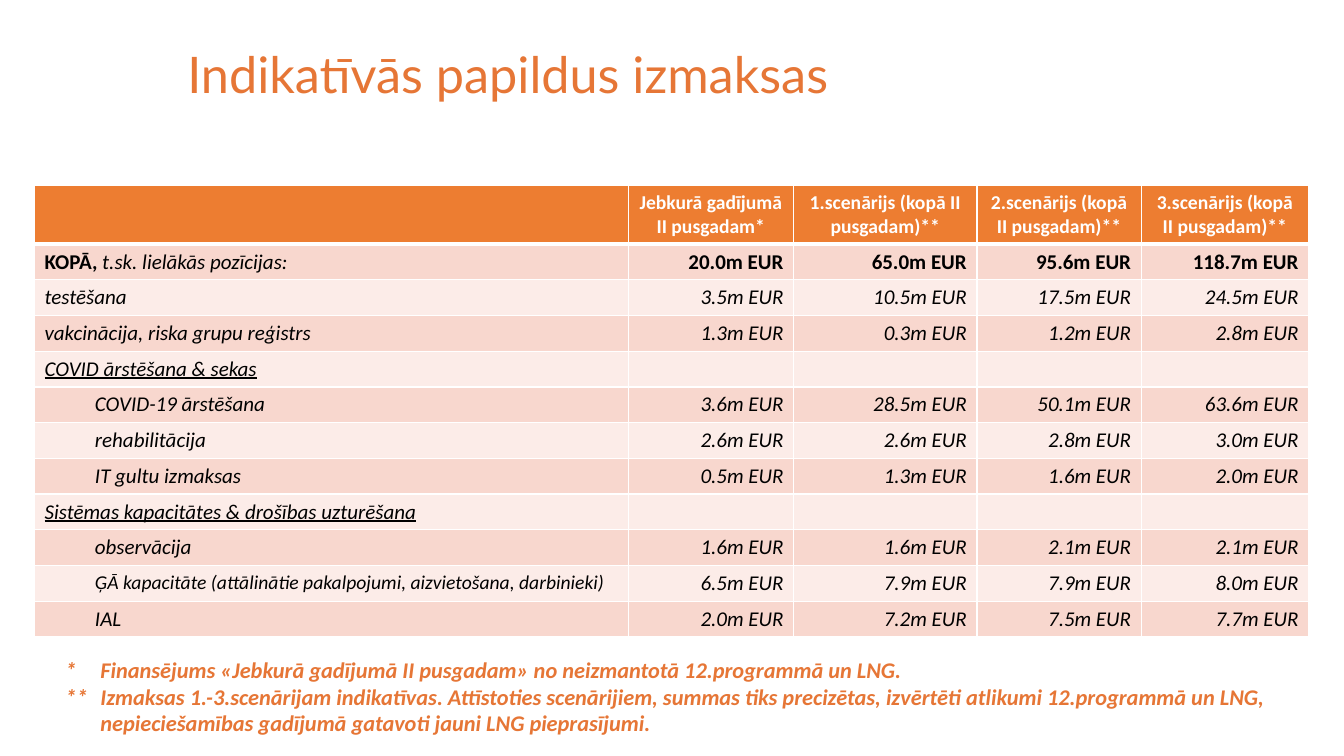
import pptx
import pptx.dml.color
import pptx.enum.text
import pptx.oxml
import pptx.oxml.ns
import pptx.util

Cm, Pt = pptx.util.Cm, pptx.util.Pt
ALIGN = pptx.enum.text.PP_ALIGN
COLORS = {
    "accent": "E67636",
    "header": "ED7D31",
    "band_dark": "F8D7CE",
    "band_light": "FCECE8",
    "white": "FFFFFF",
    "black": "000000",
}
COLUMN_WIDTHS = [14.96, 4.17, 4.62, 4.14, 4.22]
HEADER_HEIGHT, ROW_HEIGHT = 1.47, 0.9
HEADERS = [
    "",
    "Jebkurā gadījumā II pusgadam*",
    "1.scenārijs (kopā II pusgadam)**",
    "2.scenārijs (kopā II pusgadam)**",
    "3.scenārijs (kopā II pusgadam)**",
]
# Kind of row, label, amounts in millions of euros
COSTS = [
    ("total", "KOPĀ,", ["20.0", "65.0", "95.6", "118.7"]),
    ("item", "testēšana", ["3.5", "10.5", "17.5", "24.5"]),
    ("item", "vakcinācija, riska grupu reģistrs", ["1.3", "0.3", "1.2", "2.8"]),
    ("group", "COVID ārstēšana & sekas", []),
    ("sub", "COVID-19 ārstēšana", ["3.6", "28.5", "50.1", "63.6"]),
    ("sub", "rehabilitācija", ["2.6", "2.6", "2.8", "3.0"]),
    ("sub", "IT gultu izmaksas", ["0.5", "1.3", "1.6", "2.0"]),
    ("group", "Sistēmas kapacitātes & drošības uzturēšana", []),
    ("sub", "observācija", ["1.6", "1.6", "2.1", "2.1"]),
    ("long_sub", "ĢĀ kapacitāte (attālinātie pakalpojumi, aizvietošana, darbinieki)",
     ["6.5", "7.9", "7.9", "8.0"]),
    ("sub", "IAL", ["2.0", "7.2", "7.5", "7.7"]),
]
FOOTNOTES = [
    ("*", "Finansējums «Jebkurā gadījumā II pusgadam» no neizmantotā 12.programmā un LNG."),
    ("**", "Izmaksas 1.-3.scenārijam indikatīvas. Attīstoties scenārijiem, summas tiks "
           "precizētas, izvērtēti atlikumi 12.programmā un LNG, nepieciešamības gadījumā "
           "gatavoti jauni LNG pieprasījumi."),
]


def rgb(name):
    return pptx.dml.color.RGBColor.from_string(COLORS[name])


def add_run(p, text, size, color="black", font="Calibri", bold=False, italic=False,
            underline=False):
    r = p.add_run()
    r.text = text
    r.font.size = Pt(size)
    r.font.name = font
    r.font.bold = bold
    r.font.italic = italic
    r.font.underline = underline
    r.font.color.rgb = rgb(color)


def add_text_box(slide, left, top, width, height):
    sp = slide.shapes.add_textbox(Cm(left), Cm(top), Cm(width), Cm(height))
    sp.text_frame.word_wrap = True
    return sp.text_frame


def set_indent(p, left, first=0.0):
    pPr = p._p.get_or_add_pPr()
    pPr.set("marL", str(Cm(left)))
    pPr.set("indent", str(Cm(first)))


def style_cell(cell, fill, top=1, bottom=1):
    """Give a cell white borders, with widths in points, and a solid fill."""
    tcPr = cell._tc.get_or_add_tcPr()
    for side, width in zip("LRTB", (1, 1, top, bottom)):
        tcPr.append(pptx.oxml.parse_xml(
            f'<a:ln{side} {pptx.oxml.ns.nsdecls("a")} w="{Pt(width)}"><a:solidFill>'
            f'<a:srgbClr val="{COLORS["white"]}"/></a:solidFill></a:ln{side}>'))
    cell.fill.solid()
    cell.fill.fore_color.rgb = rgb(fill)


def set_empty_size(cell, size):
    """Keep an empty cell from making its row taller than its neighbours' text."""
    cell.text_frame.paragraphs[0]._p.append(pptx.oxml.parse_xml(
        f'<a:endParaRPr {pptx.oxml.ns.nsdecls("a")} sz="{size * 100}"/>'))


def add_title(slide, text):
    tf = add_text_box(slide, 4.47, 0.1, 27.15, 3.68)
    tf.vertical_anchor = pptx.enum.text.MSO_ANCHOR.MIDDLE
    p = tf.paragraphs[0]
    p.line_spacing = 0.9
    add_run(p, text, 36, "accent", "Lato")


def fill_header(table):
    for cell, text in zip(table.rows[0].cells, HEADERS):
        style_cell(cell, "header", bottom=3)
        if text:
            p = cell.text_frame.paragraphs[0]
            p.alignment = ALIGN.CENTER
            add_run(p, text, 14, "white", bold=True)


def fill_cost_row(cells, kind, label, amounts):
    total = kind == "total"
    p = cells[0].text_frame.paragraphs[0]
    if kind in ("sub", "long_sub"):
        set_indent(p, 1.27)
    add_run(p, label, 14 if kind == "long_sub" else 15, bold=total, italic=not total,
            underline=kind == "group")
    if total:
        add_run(p, " t.sk. lielākās pozīcijas:", 15, italic=True)
    for cell, amount in zip(cells[1:], amounts):
        p = cell.text_frame.paragraphs[0]
        p.alignment = ALIGN.RIGHT
        add_run(p, f"{amount}m EUR", 15, bold=total, italic=not total)
    for cell in cells[1 + len(amounts):]:
        set_empty_size(cell, 15)


def add_cost_table(slide):
    height = HEADER_HEIGHT + ROW_HEIGHT * len(COSTS)
    table = slide.shapes.add_table(
        len(COSTS) + 1, len(COLUMN_WIDTHS),
        Cm(0.87), Cm(4.68), Cm(sum(COLUMN_WIDTHS)), Cm(height)).table
    for column, width in zip(table.columns, COLUMN_WIDTHS):
        column.width = Cm(width)
    for i, row in enumerate(table.rows):
        row.height = Cm(ROW_HEIGHT if i else HEADER_HEIGHT)
    fill_header(table)
    for i, cost in enumerate(COSTS, start=1):
        cells = list(table.rows[i].cells)
        for cell in cells:
            style_cell(cell, "band_dark" if i % 2 else "band_light", top=3 if i == 1 else 1)
        fill_cost_row(cells, *cost)


def add_footnotes(slide):
    tf = add_text_box(slide, 1.4, 16.4, 31.06, 2.31)
    for i, (mark, note) in enumerate(FOOTNOTES):
        p = tf.add_paragraph() if i else tf.paragraphs[0]
        set_indent(p, 0.88, -0.88)
        add_run(p, f"{mark}\t{note}", 16, "accent", bold=True, italic=True)


def main():
    prs = pptx.Presentation()
    prs.slide_width, prs.slide_height = Cm(33.87), Cm(19.05)
    slide = prs.slides.add_slide(prs.slide_layouts[6])
    add_title(slide, "Indikatīvās papildus izmaksas")
    add_cost_table(slide)
    add_footnotes(slide)
    prs.save("out.pptx")


if __name__ == "__main__":
    main()
